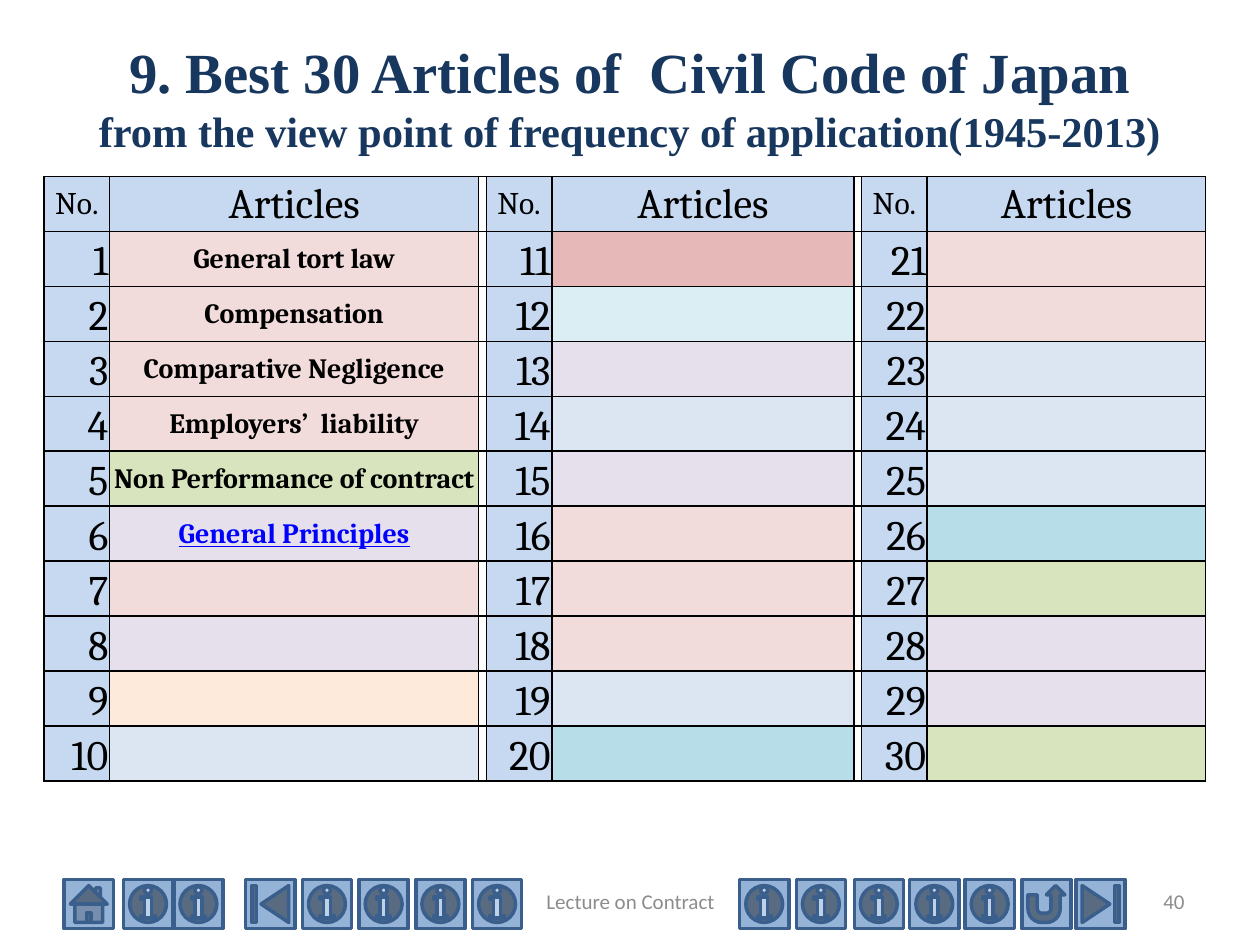
import pptx
import pptx.dml.color
import pptx.enum.shapes
import pptx.enum.text
import pptx.oxml.ns
import pptx.util
from lxml import etree

Inches = pptx.util.Inches
Shape = pptx.enum.shapes.MSO_SHAPE
Align = pptx.enum.text.PP_ALIGN
Anchor = pptx.enum.text.MSO_ANCHOR

BLUE, PINK, ROSE = "C6D9F1", "F2DCDB", "E6B9B8"
GREEN, LILAC, CREAM = "D7E4BD", "E6E0EC", "FDEADA"
MIST, ICE, AQUA = "DCE6F2", "DBEEF4", "B7DEE8"

COLUMN_WIDTHS = [0.52, 2.93, 0.06, 0.52, 2.4, 0.06, 0.52, 2.21]
ROW_HEIGHT = 4.8 / 11
ARTICLES = ["General tort law", "Compensation", "Comparative Negligence",
            "Employers’  liability", "Non Performance of contract",
            "General Principles"]
ARTICLE_FILLS = [
    [PINK, PINK, PINK, PINK, GREEN, LILAC, PINK, LILAC, CREAM, MIST],
    [ROSE, ICE, LILAC, MIST, LILAC, PINK, PINK, PINK, MIST, AQUA],
    [PINK, PINK, MIST, MIST, MIST, AQUA, GREEN, LILAC, LILAC, GREEN],
]

BUTTONS = {
    Shape.ACTION_BUTTON_HOME: [0.51],
    Shape.ACTION_BUTTON_BEGINNING: [1.95],
    Shape.ACTION_BUTTON_INFORMATION: [0.98, 1.38, 2.4, 2.85, 3.3, 3.75,
                                      5.87, 6.32, 6.78, 7.22, 7.66],
    Shape.ACTION_BUTTON_RETURN: [8.11],
    Shape.ACTION_BUTTON_END: [8.54],
}

TITLE = dict(name="Times New Roman", size=32.4, color="17375E", bold=True)
SUBTITLE = dict(TITLE, size=24.3)
FOOTER = dict(name="Calibri", size=12, color="8C8C8C")
NUMBER = dict(name="Cambria", size=24, color="000000", bold=False)
NUMBER_HEAD = dict(NUMBER, size=18)
ARTICLE = dict(NUMBER, size=16, bold=True)
LINKED_ARTICLE = dict(ARTICLE, color="0000FF", underline=True)


def rgb(value):
    return pptx.dml.color.RGBColor.from_string(value)


class SlideBuilder:
    button_size, button_top = 0.39, 6.98
    button_fill, button_line = "95B3D7", "3A5F8C"

    def __init__(self, slide):
        self.slide = slide

    def span(self, para, text, style):
        span = para.add_run()
        span.text = text
        for key, value in style.items():
            if key == "color":
                span.font.color.rgb = rgb(value)
            else:
                setattr(span.font, key,
                        pptx.util.Pt(value) if key == "size" else value)

    def text(self, left, top, width, height, lines, align=Align.CENTER):
        """Add a text box whose (text, style) lines share one paragraph."""
        box = self.slide.shapes.add_textbox(
            Inches(left), Inches(top), Inches(width), Inches(height))
        box.text_frame.word_wrap = True
        box.text_frame.vertical_anchor = Anchor.MIDDLE
        para = box.text_frame.paragraphs[0]
        para.alignment = align
        for index, (text, style) in enumerate(lines):
            if index:
                para.add_line_break()
            self.span(para, text, style)

    def button(self, kind, left):
        shape = self.slide.shapes.add_shape(
            kind, Inches(left), Inches(self.button_top),
            Inches(self.button_size), Inches(self.button_size))
        shape.shadow.inherit = False
        shape.fill.solid()
        shape.fill.fore_color.rgb = rgb(self.button_fill)
        shape.line.color.rgb = rgb(self.button_line)
        shape.line.width = pptx.util.Pt(2)

    def table(self, left, top, widths, row_count, row_height):
        frame = self.slide.shapes.add_table(
            row_count, len(widths), Inches(left), Inches(top),
            Inches(sum(widths)), Inches(row_count * row_height))
        table = frame.table
        table.first_row = table.horz_banding = False
        for column, width in zip(table.columns, widths):
            column.width = Inches(width)
        for row in table.rows:
            row.height = Inches(row_height)
        for cell in table.iter_cells():
            cell.fill.background()
            self.borders(cell)
            cell.margin_left = cell.margin_right = cell.margin_top = Inches(0.01)
            cell.margin_bottom = 0
        return table

    def borders(self, cell, color="000000", width=1):
        properties = cell._tc.get_or_add_tcPr()
        qn = pptx.oxml.ns.qn
        for index, side in enumerate(("a:lnL", "a:lnR", "a:lnT", "a:lnB")):
            line = etree.Element(qn(side), w=str(pptx.util.Pt(width)))
            fill = etree.SubElement(line, qn("a:solidFill"))
            etree.SubElement(fill, qn("a:srgbClr"), val=color)
            properties.insert(index, line)

    def cell(self, cell, fill, text="", style=ARTICLE, align=Align.CENTER,
             anchor=Anchor.MIDDLE):
        cell.fill.solid()
        cell.fill.fore_color.rgb = rgb(fill)
        cell.vertical_anchor = anchor
        para = cell.text_frame.paragraphs[0]
        para.alignment = align
        if text:
            self.span(para, text, style)


def add_articles(builder):
    table = builder.table(0.35, 1.4, COLUMN_WIDTHS, 11, ROW_HEIGHT)
    for group, fills in enumerate(ARTICLE_FILLS):
        column = 3 * group
        builder.cell(table.cell(0, column), BLUE, "No.", NUMBER_HEAD)
        builder.cell(table.cell(0, column + 1), BLUE, "Articles", NUMBER)
        for row, fill in enumerate(fills, 1):
            number = 10 * group + row
            article = ARTICLES[number - 1] if number <= len(ARTICLES) else ""
            style = LINKED_ARTICLE if number == 6 else ARTICLE
            builder.cell(table.cell(row, column), BLUE, str(number), NUMBER,
                         Align.RIGHT, Anchor.BOTTOM)
            builder.cell(table.cell(row, column + 1), fill, article, style)


def main():
    deck = pptx.Presentation()
    deck.slide_width, deck.slide_height = Inches(10), Inches(7.5)
    builder = SlideBuilder(deck.slides.add_slide(deck.slide_layouts[6]))

    for kind, lefts in BUTTONS.items():
        for left in lefts:
            builder.button(kind, left)
    builder.text(0.5, 0.3, 9, 0.93, [
        ("9. Best 30 Articles of  Civil Code of Japan", TITLE),
        ("from the view point of frequency of application(1945-2013)", SUBTITLE)])
    add_articles(builder)
    builder.text(3.42, 6.95, 3.17, 0.4, [("Lecture on Contract", FOOTER)])
    builder.text(7.17, 6.95, 2.33, 0.4, [("40", FOOTER)], Align.RIGHT)
    deck.save("out.pptx")


if __name__ == "__main__":
    main()
